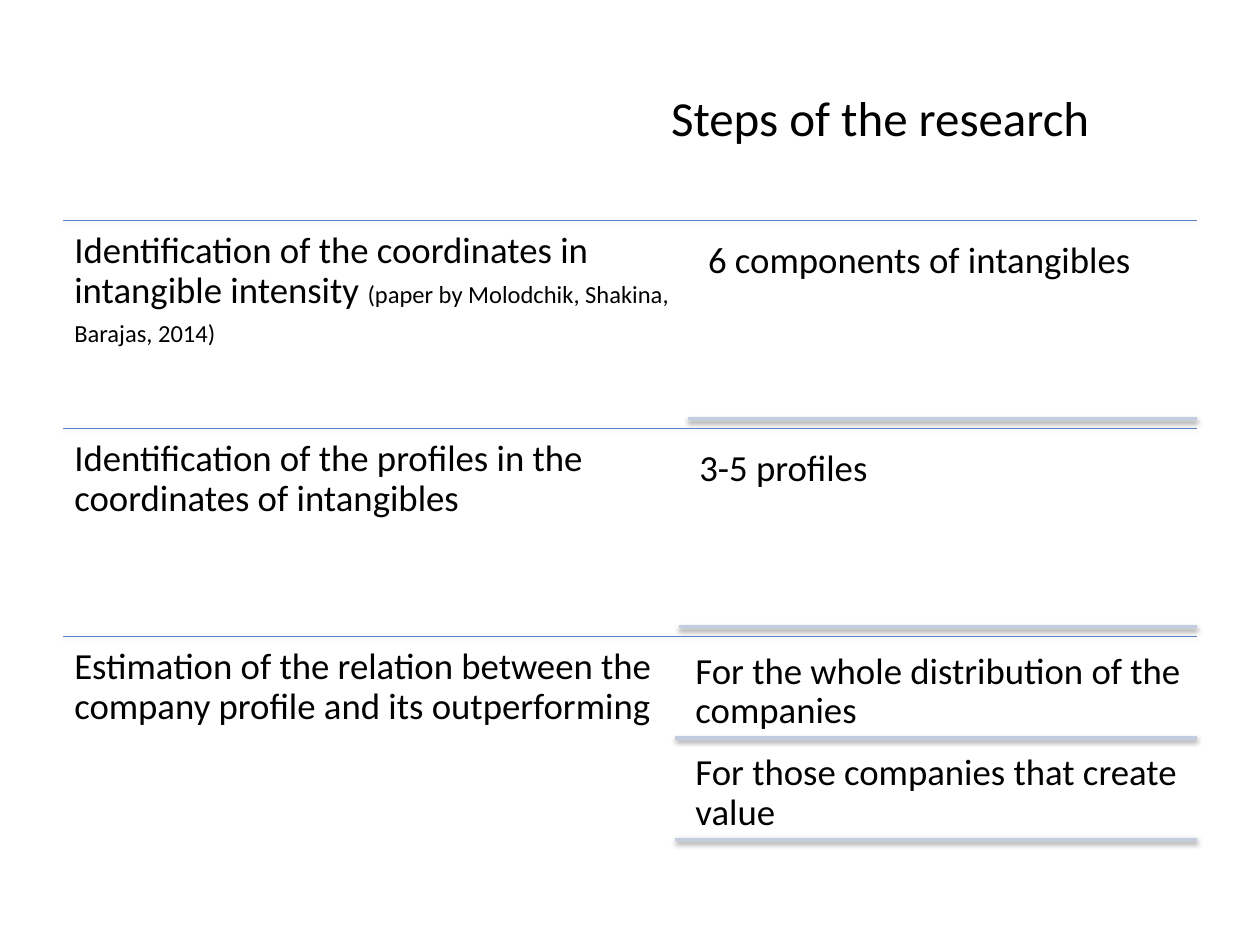
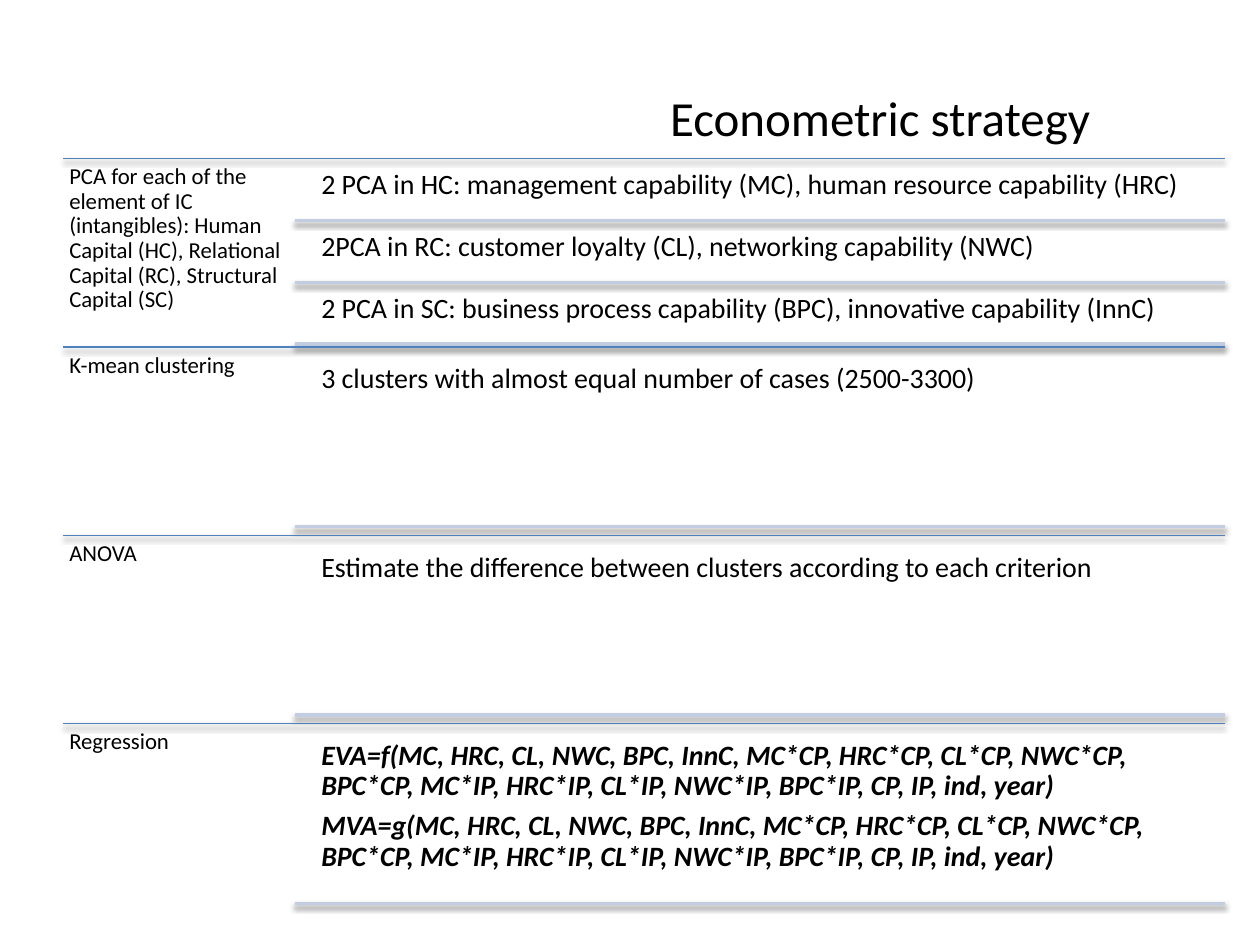
from pptx import Presentation
from pptx.dml.color import RGBColor
from pptx.enum.shapes import MSO_CONNECTOR as Connector
from pptx.enum.text import MSO_ANCHOR as Anchor, PP_ALIGN as Align
from pptx.oxml import parse_xml
from pptx.oxml.ns import nsdecls
from pptx.util import Inches, Pt

THEME = {
    "font": "Calibri",
    "text": RGBColor.from_string("000000"),
    "title_size": 28,
    "line_spacing": 0.9,
    "space_after": 0.35,  # share of the type size
    "gap": 0.047,         # share of the section height, split between its details
    # Rules: colour, width, shadow blur, distance and opacity
    "section_rule": ("4F81BD", 0.75, 3.1, 1.8, 35),
    "detail_rule": ("C2CDE1", 2, 3.1, 1.6, 38),
}


def add_text(page, area, paragraphs, size, inset=None, align=Align.LEFT,
             anchor=Anchor.TOP, **font_format):
    """Each paragraph is a list of (text, size) spans or a plain string."""
    frame = page.shapes.add_textbox(*map(Inches, area)).text_frame
    frame.word_wrap = True
    frame.vertical_anchor = anchor
    if inset is not None:
        for side in ("left", "top", "right", "bottom"):
            setattr(frame, f"margin_{side}", Inches(inset))
    for index, spans in enumerate(paragraphs):
        para = frame.add_paragraph() if index else frame.paragraphs[0]
        para.alignment = align
        if inset is not None:
            para.line_spacing = THEME["line_spacing"]
            para.space_after = Pt(size * THEME["space_after"])
        for text, span_size in [(spans, size)] if isinstance(spans, str) else spans:
            span = para.add_run()
            span.text = text
            span.font.color.rgb = THEME["text"]
            values = {"name": THEME["font"], "size": Pt(span_size), **font_format}
            for name, value in values.items():
                setattr(span.font, name, value)


def add_rule(page, left, right, y, style):
    color, width, blur, distance, opacity = THEME[style]
    rule = page.shapes.add_connector(
        Connector.STRAIGHT, Inches(left), Inches(y), Inches(right), Inches(y))
    rule.line.color.rgb = RGBColor.from_string(color)
    rule.line.width = Pt(width)
    rule._element.spPr.append(parse_xml(
        f'<a:effectLst {nsdecls("a")}><a:outerShdw blurRad="{Pt(blur)}" '
        f'dist="{Pt(distance)}" dir="5400000" rotWithShape="0">'
        f'<a:srgbClr val="000000"><a:alpha val="{opacity * 1000}"/></a:srgbClr>'
        '</a:outerShdw></a:effectLst>'))


# Content: a section has a label, the label width, details and a detail format
EMPHASIS = {"bold": True, "italic": True}
FACTORS = ("(MC, HRC, CL, NWC, BPC, InnC, MC*CP, HRC*CP, CL*CP, NWC*CP, BPC*CP, "
           "MC*IP, HRC*IP, CL*IP, NWC*IP, BPC*IP, CP, IP, ind, year)")
PAGES = [
    {
        "title": "Steps of the research",
        "top": 1.75, "right": 9.5, "section_height": 1.65, "indent": 0.07,
        "label_size": 21, "label_inset": 0.09,
        "detail_size": 21, "detail_inset": 0.09,
        "sections": [
            ([("Identification of the coordinates in intangible intensity ", 21),
              ("(paper by Molodchik, Shakina, Barajas, 2014)", 14), (" ", 21)],
             4.96, [["6 components of intangibles"]], {}),
            ("Identification of the profiles in the coordinates of intangibles",
             4.89, [["3-5 profiles"]], {}),
            ("Estimation of the relation between the company profile and its "
             "outperforming",
             4.86, [["For the whole distribution of the companies"],
                    ["For those companies that create value"]], {}),
        ],
    },
    {
        "title": "Econometric strategy",
        "top": 1.26, "right": 9.72, "section_height": 5.98 / 4, "indent": 0.14,
        "label_size": 13, "label_inset": 0.05,
        "detail_size": 16, "detail_inset": 0.07,
        "sections": [
            ("PCA for each of the element of IC (intangibles): Human Capital (HC), "
             "Relational Capital (RC), Structural Capital (SC)", 1.84,
             [["2 PCA in HC: management capability (MC), human resource capability (HRC)"],
              ["2PCA in RC: customer loyalty (CL), networking capability (NWC)"],
              ["2 PCA in SC: business process capability (BPC), innovative capability (InnC)"]],
             {}),
            ("K-mean clustering", 1.84,
             [["3 clusters with almost equal number of cases (2500-3300)"]], {}),
            ("ANOVA", 1.84,
             [["Estimate the difference between clusters according to each criterion"]], {}),
            ("Regression", 1.84, [["EVA=f" + FACTORS, "MVA=g" + FACTORS]], EMPHASIS),
        ],
    },
]
LEFT = 0.5

deck = Presentation()
deck.slide_width, deck.slide_height = Inches(10), Inches(7.5)

for content in PAGES:
    page = deck.slides.add_slide(deck.slide_layouts[6])
    right, height = content["right"], content["section_height"]

    # Title
    add_text(page, (4.47, 0.3, 5.03, 1.25), [content["title"]], THEME["title_size"],
             align=Align.CENTER, anchor=Anchor.MIDDLE)

    for number, (label, width, details, emphasis) in enumerate(content["sections"]):
        # Section rule and label
        top = content["top"] + number * height
        add_rule(page, LEFT, right, top, "section_rule")
        add_text(page, (LEFT, top, width, height), [label],
                 content["label_size"], content["label_inset"])

        # Details share the section height, with equal gaps around them
        branch = LEFT + width
        detail_left = branch + content["indent"]
        gap = THEME["gap"] * height / len(details)
        detail_height = (height - gap * (len(details) + 1)) / len(details)
        for row, paragraphs in enumerate(details):
            y = top + gap + row * (detail_height + gap)
            add_text(page, (detail_left, y, right - detail_left, detail_height),
                     paragraphs, content["detail_size"], content["detail_inset"],
                     **emphasis)
            add_rule(page, branch, right, y + detail_height, "detail_rule")

deck.save("out.pptx")
